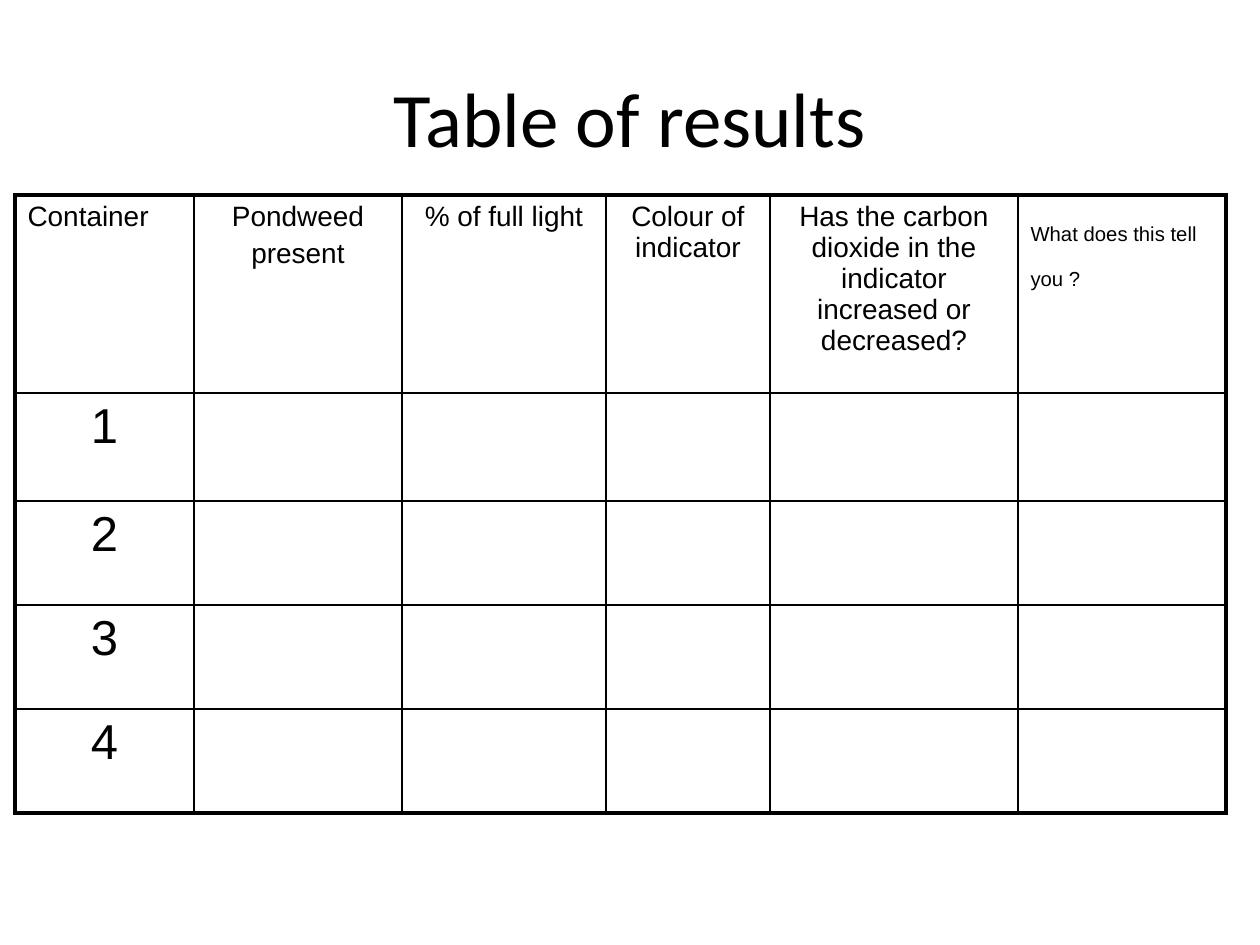
from lxml import etree
from pptx import Presentation
from pptx import util as u
from pptx.dml.color import RGBColor
from pptx.enum import text
from pptx.oxml.ns import qn

PX = 914400 / 126
BLACK = "000000"
TITLE = "Table of results"
TITLE_BOX = (63, 38, 1134, 157)
TABLE_AT = (15, 195)
COLUMNS = [179, 208, 204, 164, 248, 208]
ROWS = [198, 108, 104, 104, 104]
LEFT, CENTER = text.PP_ALIGN.LEFT, text.PP_ALIGN.CENTER
HEADINGS = [
    (["Container"], LEFT, 16, None),
    (["Pondweed", "present"], CENTER, 16, None),
    (["% of full light"], CENTER, 16, None),
    (["Colour of indicator"], CENTER, 16, None),
    (["Has the carbon dioxide in the indicator increased or decreased?"], CENTER, 16, None),
    (["What does this tell you ?"], LEFT, 20, "-25000"),
]
CONTAINERS = ["1", "2", "3", "4"]
THIN, THICK = 1, 2.25


def px(n):
    return u.Emu(round(n * PX))


def color(value):
    return RGBColor.from_string(value)


def write(tf, lines, align, size, font, baseline=None):
    for i, line in enumerate(lines):
        p = tf.add_paragraph() if i else tf.paragraphs[0]
        p.alignment = align
        if i:
            p.space_before = u.Pt(size * 0.2)
        r = p.add_run()
        r.text = line
        r.font.size = u.Pt(size)
        r.font.name = font
        r.font.color.rgb = color(BLACK)
        if baseline:
            r.font._element.set("baseline", baseline)


def set_borders(cell, widths):
    tc_pr = cell._tc.get_or_add_tcPr()
    for i, (side, width) in enumerate(widths.items()):
        ln = etree.Element(qn("a:ln" + side), w=str(u.Pt(width)))
        fill = etree.SubElement(ln, qn("a:solidFill"))
        etree.SubElement(fill, qn("a:srgbClr"), val=BLACK)
        tc_pr.insert(i, ln)


prs = Presentation()
prs.slide_width, prs.slide_height = px(1260), px(945)
s = prs.slides.add_slide(prs.slide_layouts[6])

title = s.shapes.add_textbox(*map(px, TITLE_BOX))
tf = title.text_frame
tf.word_wrap = True
tf.vertical_anchor = text.MSO_ANCHOR.MIDDLE
write(tf, [TITLE], CENTER, 44, "Calibri")

size = (sum(COLUMNS), sum(ROWS))
table = s.shapes.add_table(len(ROWS), len(COLUMNS), *map(px, TABLE_AT + size)).table
table.first_row = table.horz_banding = False
for column, width in zip(table.columns, COLUMNS):
    column.width = px(width)
for row, height in zip(table.rows, ROWS):
    row.height = px(height)

last_row, last_column = len(ROWS) - 1, len(COLUMNS) - 1
for i, row in enumerate(table.rows):
    for j, cell in enumerate(row.cells):
        cell.fill.background()
        edges = {"L": j == 0, "R": j == last_column, "T": i == 0, "B": i == last_row}
        set_borders(cell, {side: THICK if outer else THIN for side, outer in edges.items()})

for j, (lines, align, points, baseline) in enumerate(HEADINGS):
    write(table.cell(0, j).text_frame, lines, align, points, "Arial", baseline)
for i, number in enumerate(CONTAINERS, 1):
    write(table.cell(i, 0).text_frame, [number], CENTER, 28, "Arial")

prs.save("out.pptx")
